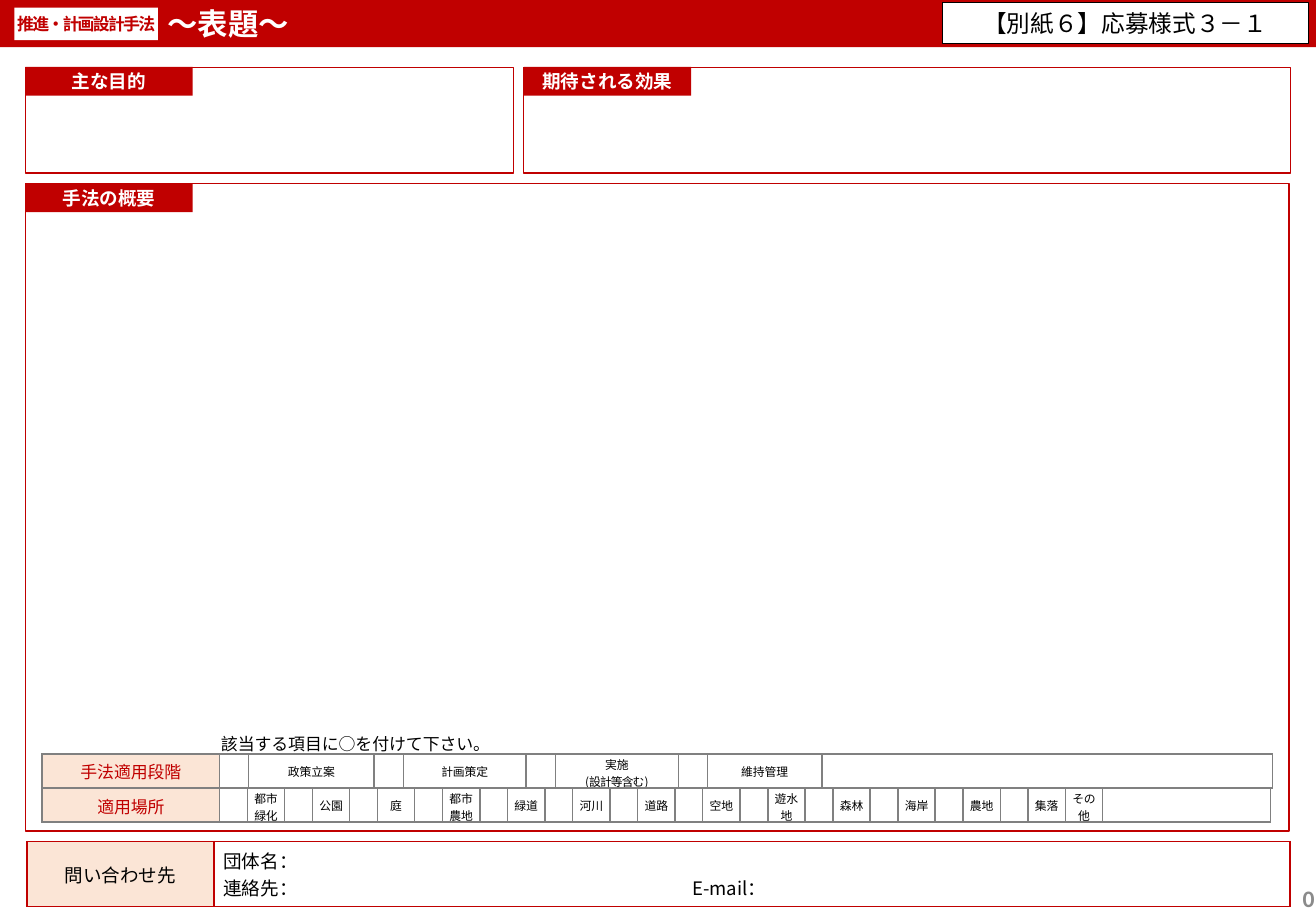
"""Build the application form slide for planning and design methods."""
from dataclasses import dataclass

from lxml.etree import SubElement
from pptx import Presentation
from pptx.dml.color import RGBColor
from pptx.enum.shapes import MSO_SHAPE
from pptx.enum.text import MSO_ANCHOR, PP_ALIGN
from pptx.oxml.ns import qn
from pptx.slide import Slide
from pptx.table import Table, _Cell
from pptx.text.text import TextFrame, _Run
from pptx.util import Cm, Pt

RED, PEACH, GRAY = "C00000", "FBE5D6", "808080"
WHITE, BLACK, PAGE_GRAY = "FFFFFF", "000000", "8B8B8B"
JP_FONT = "Noto Sans CJK JP"
CELL_PAD = (0.2, 0.1, 0.2, 0.1)
TIGHT_PAD = (0.03, 0.03, 0.03, 0)


@dataclass
class Box:
    left: float
    top: float
    width: float
    height: float


@dataclass
class Panel:
    title: str
    frame: Box
    tag_top: float


@dataclass
class CheckRow:
    title: str
    top: float
    labels: list[str]
    widths: list[float]
    title_pad: tuple


PANELS = [
    Panel("主な目的", Box(0.53, 1.42, 10.2, 2.2), 1.4),
    Panel("期待される効果", Box(10.95, 1.42, 16.03, 2.2), 1.4),
    Panel("手法の概要", Box(0.53, 3.84, 26.42, 13.54), 3.84),
]
STAGES = ["政策立案", "計画策定", "実施\n(設計等含む)", "維持管理"]
PLACES = ["都市\n緑化", "公園", "庭", "都市\n農地", "緑道", "河川", "道路", "空地",
          "遊水地", "森林", "海岸", "農地", "集落"]


def with_marks(labels: list[str]) -> list[str]:
    """Put an empty mark cell before each label."""
    return [text for label in labels for text in ("", label)]


CHECK_ROWS = [
    CheckRow("手法適用段階", 15.77, with_marks(STAGES) + [""],
             [3.71, 0.61, 2.62, 0.61, 2.57, 0.61, 2.57, 0.61, 2.39, 9.42], CELL_PAD),
    CheckRow("適用場所", 16.48, with_marks(PLACES) + ["その\n他", ""],
             [3.71] + [0.58, 0.78] * len(PLACES) + [0.78, 3.51], TIGHT_PAD),
]


def rgb(color: str) -> RGBColor:
    """Turn a hex string into a colour."""
    return RGBColor.from_string(color)


def set_spacing(r: _Run, points: float) -> None:
    """Set the character spacing of a run."""
    r.font._element.set("spc", str(round(points * 100)))


def add_text(box: TextFrame | _Cell, text: str, *, size: float, color: str = BLACK,
             bold: bool = False, align: PP_ALIGN = PP_ALIGN.CENTER, font: str = JP_FONT,
             pad: tuple = CELL_PAD, spacing: float = 0, tab: float = 0) -> None:
    """Write text, one paragraph per line, with one format."""
    tf = box if isinstance(box, TextFrame) else box.text_frame
    box.margin_left, box.margin_top, box.margin_right, box.margin_bottom = map(Cm, pad)
    box.vertical_anchor = MSO_ANCHOR.MIDDLE
    for i, line in enumerate(text.split("\n")):
        p = tf.add_paragraph() if i else tf.paragraphs[0]
        p.alignment = align
        if tab:
            tabs = SubElement(p._p.get_or_add_pPr(), qn("a:tabLst"))
            SubElement(tabs, qn("a:tab"), pos=str(Cm(tab)), algn="l")
        if not line:
            SubElement(p._p, qn("a:endParaRPr"), sz=str(round(size * 100)))
            continue
        r = p.add_run()
        r.text = line
        r.font.size, r.font.bold, r.font.name = Pt(size), bold, font
        r.font.color.rgb = rgb(color)
        SubElement(r.font._element, qn("a:ea"), typeface=font)
        if spacing:
            set_spacing(r, spacing)


def add_rect(s: Slide, box: Box, fill: str = "", line: str = "") -> TextFrame:
    """Draw a rectangle and return its text frame."""
    sp = s.shapes.add_shape(MSO_SHAPE.RECTANGLE, Cm(box.left), Cm(box.top),
                            Cm(box.width), Cm(box.height))
    sp.shadow.inherit = False
    if fill:
        sp.fill.solid()
        sp.fill.fore_color.rgb = rgb(fill)
    else:
        sp.fill.background()
    if line:
        sp.line.color.rgb = rgb(line)
        sp.line.width = Pt(0.75)
    else:
        sp.line.fill.background()
    return sp.text_frame


def add_label(s: Slide, box: Box) -> TextFrame:
    """Add a text box and return its text frame."""
    tf = s.shapes.add_textbox(Cm(box.left), Cm(box.top), Cm(box.width), Cm(box.height)).text_frame
    tf.word_wrap = True
    return tf


def add_row(s: Slide, left: float, top: float, height: float, widths: list[float],
            border: str) -> Table:
    """Add a one-row table with a shaded first cell."""
    table = s.shapes.add_table(1, len(widths), Cm(left), Cm(top), Cm(sum(widths)),
                               Cm(height)).table
    table.first_row = table.horz_banding = False
    for i, width in enumerate(widths):
        table.columns[i].width = Cm(width)
        cell = table.cell(0, i)
        tc_pr = cell._tc.get_or_add_tcPr()
        for side in "LRTB":
            ln = SubElement(tc_pr, qn(f"a:ln{side}"), w=str(Pt(1)))
            SubElement(SubElement(ln, qn("a:solidFill")), qn("a:srgbClr"), val=border)
        cell.fill.background()
    title = table.cell(0, 0)
    title.fill.solid()
    title.fill.fore_color.rgb = rgb(PEACH)
    return table


def add_panel(s: Slide, panel: Panel) -> None:
    """Draw an outlined panel with its title tag."""
    add_rect(s, panel.frame, line=RED)
    tag = add_rect(s, Box(panel.frame.left, panel.tag_top, 3.5, 0.6), fill=RED)
    add_text(tag, panel.title, size=11, color=WHITE, bold=True)


def add_check_row(s: Slide, row: CheckRow) -> Table:
    """Draw a row of labels with cells to mark."""
    table = add_row(s, 0.88, row.top, 0.71, row.widths, GRAY)
    add_text(table.cell(0, 0), row.title, size=10, color=RED, pad=row.title_pad)
    for i, label in enumerate(row.labels, 1):
        add_text(table.cell(0, i), label, size=7, pad=TIGHT_PAD)
    return table


def main() -> None:
    """Build and save the slide."""
    prs = Presentation()
    prs.slide_width, prs.slide_height = Cm(27.51), Cm(19.05)
    s = prs.slides.add_slide(prs.slide_layouts[6])

    header = add_rect(s, Box(0, 0, 27.51, 0.99), fill=RED)
    add_text(header, "～表題～", size=18, color=WHITE, bold=True, align=PP_ALIGN.LEFT,
             pad=(3.5, 0.13, 0.25, 0.13))
    category = add_rect(s, Box(0.3, 0.16, 3, 0.68), fill=WHITE)
    add_text(category, "推進・計画設計手法", size=10, color=RED, bold=True, spacing=-1,
             pad=(0, 0, 0, 0))
    form_name = add_rect(s, Box(19.7, 0.05, 7.65, 0.86), fill=WHITE, line=BLACK)
    add_text(form_name, "【別紙６】応募様式３－１", size=14)

    for panel in PANELS:
        add_panel(s, panel)

    hint = add_label(s, Box(4.37, 15.21, 6.15, 0.69))
    add_text(hint, "該当する項目に○を付けて下さい。", size=10, align=PP_ALIGN.LEFT,
             pad=(0.25, 0, 0.25, 0))
    stages, _ = [add_check_row(s, row) for row in CHECK_ROWS]
    set_spacing(stages.cell(0, 6).text_frame.paragraphs[1].runs[0], -0.5)

    contact = add_row(s, 0.56, 17.6, 1.35, [3.91, 22.5], RED)
    add_text(contact.cell(0, 0), "問い合わせ先", size=11)
    add_text(contact.cell(0, 1), "団体名：\n連絡先：\tE-mail：", size=11,
             align=PP_ALIGN.LEFT, tab=9.8)

    page_number = add_label(s, Box(26.5, 18.49, 1.01, 0.56))
    add_text(page_number, "0", size=14, color=PAGE_GRAY, bold=True, font="Calibri",
             align=PP_ALIGN.RIGHT, pad=(0, 0, 0.03, 0))
    prs.save("out.pptx")


if __name__ == "__main__":
    main()
